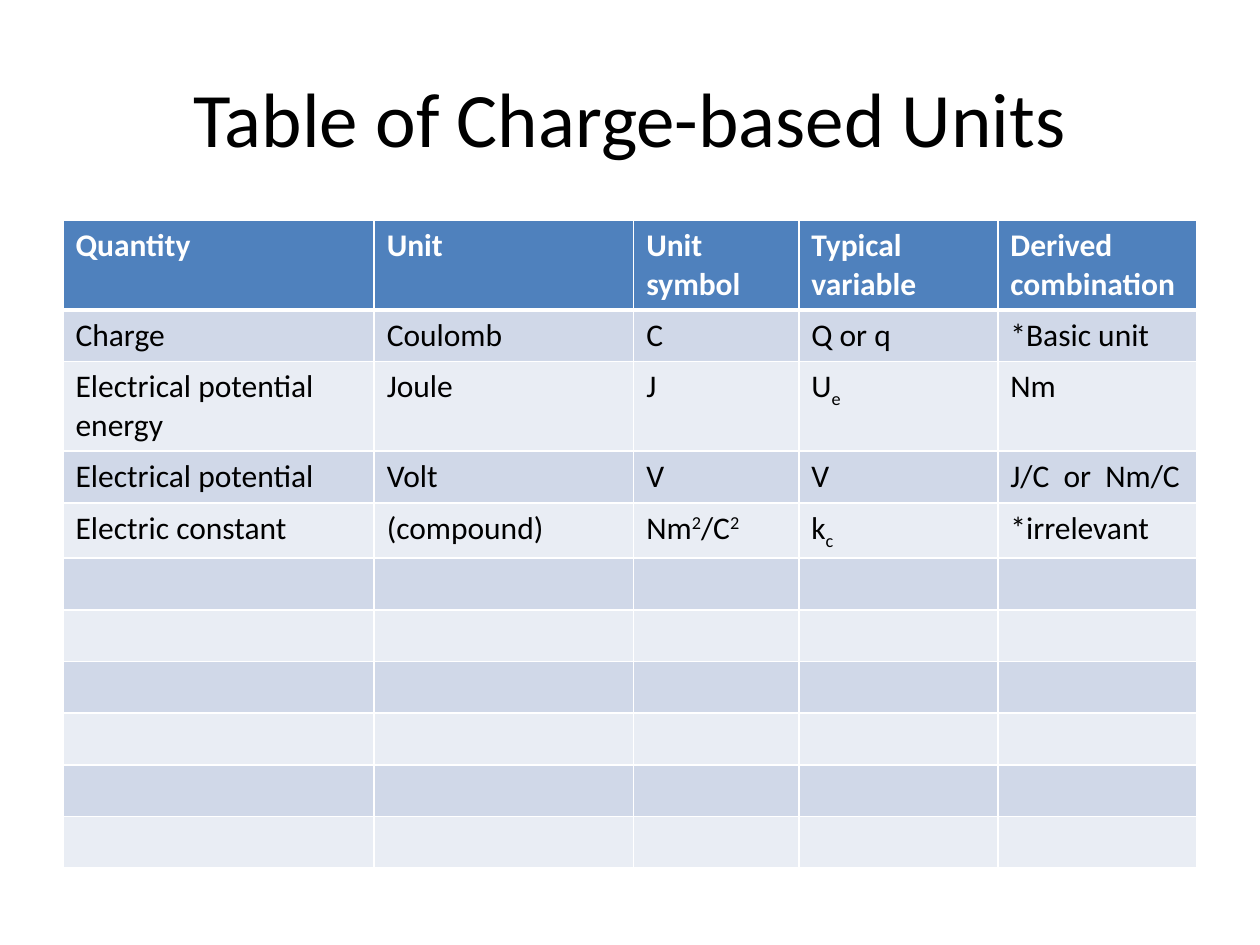
from dataclasses import dataclass

from lxml import etree
from pptx import Presentation
from pptx.dml.color import RGBColor
from pptx.enum import text
from pptx.oxml.ns import qn
from pptx.util import Inches, Pt

COLORS = {
    "text": "000000",
    "header": "4F81BD",
    "header_text": "FFFFFF",
    "band_dark": "D0D8E8",
    "band_light": "E9EDF4",
    "rule": "FFFFFF",
}
FONT = "Calibri"
SUB, SUP = -25, 30


@dataclass(frozen=True)
class Part:
    """A piece of text with its baseline shift in percent."""
    text: str
    shift: int = 0


COLUMN_WIDTHS = [2.47, 2.06, 1.31, 1.58, 1.58]
ROW_HEIGHT = 0.41
ROW_COUNT = 11
ROWS = [
    ["Quantity", "Unit", "Unit symbol", "Typical variable", "Derived combination"],
    ["Charge", "Coulomb", "C", "Q or q", "*Basic unit"],
    ["Electrical potential energy", "Joule", "J", [Part("U"), Part("e", SUB)], "Nm"],
    ["Electrical potential", "Volt", "V", "V", "J/C  or  Nm/C"],
    ["Electric constant", "(compound)",
     [Part("Nm"), Part("2", SUP), Part("/C"), Part("2", SUP)],
     [Part("k"), Part("c", SUB)], "*irrelevant"],
]


def add_run(p, part: Part, size: float, color: str, bold: bool = False) -> None:
    r = p.add_run()
    r.text = part.text
    r.font.name = FONT
    r.font.size = Pt(size)
    r.font.bold = bold
    r.font.color.rgb = RGBColor.from_string(COLORS[color])
    if part.shift:
        r.font._element.set("baseline", str(part.shift * 1000))


def set_borders(cell, row: int) -> None:
    """Rule all four sides, with a heavy line under the header."""
    widths = {"L": 1, "R": 1, "T": 3 if row == 1 else 1, "B": 3 if row == 0 else 1}
    props = cell._tc.get_or_add_tcPr()
    for side, width in widths.items():
        line = etree.SubElement(props, qn(f"a:ln{side}"), w=str(Pt(width)))
        fill = etree.SubElement(line, qn("a:solidFill"))
        etree.SubElement(fill, qn("a:srgbClr"), val=COLORS["rule"])


def format_cell(cell, row: int, content: str | list[Part]) -> None:
    header = row == 0
    band = "header" if header else "band_dark" if row % 2 else "band_light"
    set_borders(cell, row)
    cell.fill.solid()
    cell.fill.fore_color.rgb = RGBColor.from_string(COLORS[band])
    p = cell.text_frame.paragraphs[0]
    parts = [Part(content)] if isinstance(content, str) else content
    for part in parts:
        add_run(p, part, 18, "header_text" if header else "text", header)


def add_title(slide, title: str) -> None:
    sp = slide.shapes.title
    sp.left, sp.top = Inches(0.5), Inches(0.3)
    sp.width, sp.height = Inches(9), Inches(1.25)
    tf = sp.text_frame
    tf.vertical_anchor = text.MSO_ANCHOR.MIDDLE
    p = tf.paragraphs[0]
    p.alignment = text.PP_ALIGN.CENTER
    add_run(p, Part(title), 44, "text")


def add_units_table(slide) -> None:
    table = slide.shapes.add_table(
        ROW_COUNT, len(COLUMN_WIDTHS), Inches(0.5), Inches(1.75),
        Inches(sum(COLUMN_WIDTHS)), Inches(ROW_HEIGHT * ROW_COUNT)).table
    for column, width in zip(table.columns, COLUMN_WIDTHS):
        column.width = Inches(width)
    for i, row in enumerate(table.rows):
        row.height = Inches(ROW_HEIGHT)
        contents = ROWS[i] if i < len(ROWS) else [[]] * len(COLUMN_WIDTHS)
        for cell, content in zip(row.cells, contents):
            format_cell(cell, i, content)


def main() -> None:
    prs = Presentation()
    prs.slide_width, prs.slide_height = Inches(10), Inches(7.5)
    slide = prs.slides.add_slide(prs.slide_layouts[5])
    add_title(slide, "Table of Charge-based Units")
    add_units_table(slide)
    prs.save("out.pptx")


if __name__ == "__main__":
    main()
